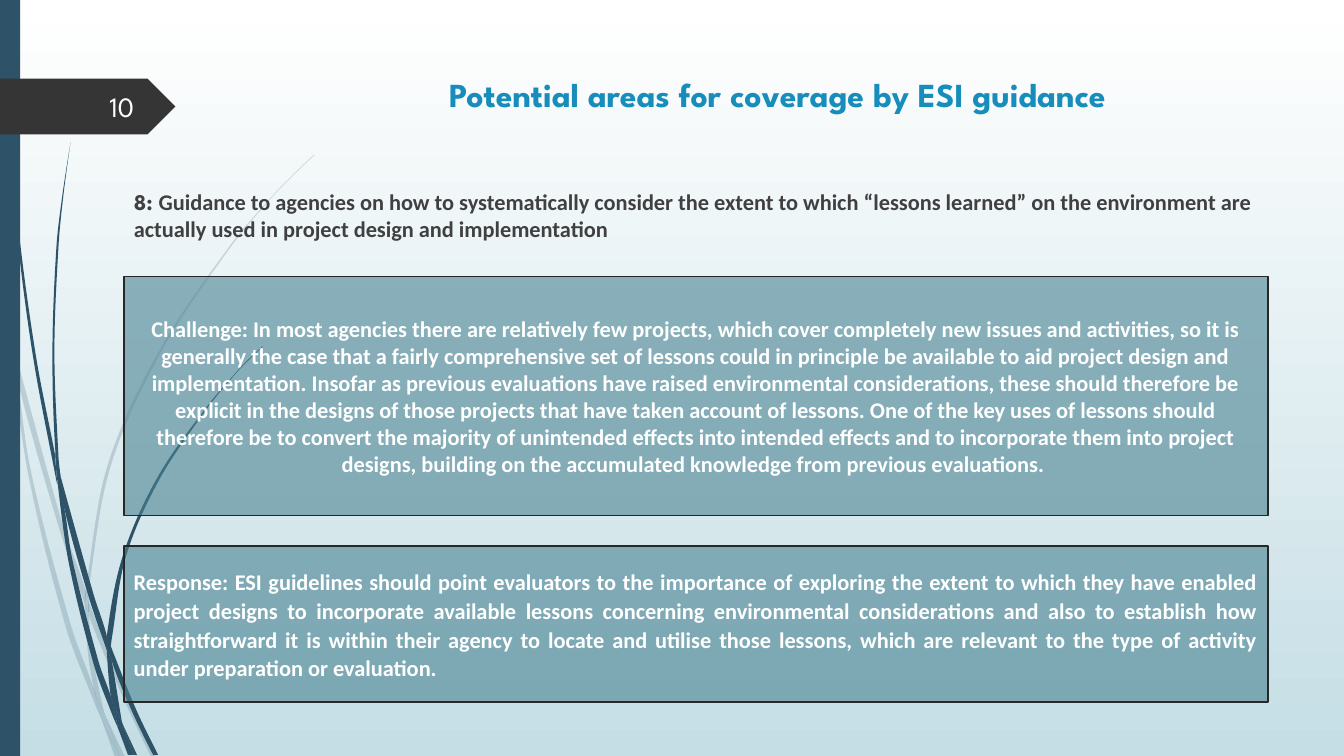
from dataclasses import dataclass
from math import hypot

from lxml.etree import SubElement
from pptx import Presentation
from pptx.dml.color import RGBColor as Rgb
from pptx.enum.shapes import MSO_SHAPE as Kind
from pptx.enum.text import MSO_ANCHOR as Anchor, MSO_AUTO_SIZE as Fit, PP_ALIGN as Align
from pptx.oxml.ns import qn
from pptx.shapes.base import BaseShape
from pptx.slide import Slide
from pptx.text.text import Font, TextFrame
from pptx.util import Cm, Pt

Point = tuple[float, float]


@dataclass(frozen=True)
class Theme:
    navy: str = "2E5369"
    tag: str = "353535"
    teal: str = "498392"
    edge: str = "272727"
    title: str = "178DBB"
    ink: str = "404040"
    white: str = "FFFFFF"
    sky: str = "C5DEE5"
    head: str = "League Spartan"
    text: str = "Calibri"
    big: int = 24
    mid: int = 20
    small: int = 16


@dataclass(frozen=True)
class Plant:
    """Leaf outlines in inches, all drawn at one opacity in percent."""
    alpha: int
    leaves: tuple[tuple[Point, ...], ...]


@dataclass(frozen=True)
class Panel:
    text: str
    top: float
    height: float
    align: Align
    lead: float = 1.0
    after: int = 0


LOOK = Theme()
WIDE, HIGH = 33.87, 19.05
LEFT, SPAN = 3.12, 28.83
INCH = 2.54

PALE = Plant(20, (
    ((.11, 3.5), (.09, 3.22), (0, 2.82), (0, 2.99), (.1, 3.44)),
    ((.58, 5.22), (.84, 5.99), (.85, 5.86), (.62, 5.2), (.14, 3.45), (.17, 3.76)),
    ((.92, 6.07), (.88, 5.96), (.88, 6.1), (1.23, 6.94), (1.5, 7.51), (1.55, 7.51), (1.27, 6.92)),
    ((1.19, 7.51), (1.24, 7.51), (1.05, 7.11)),
    ((.93, 6.83), (.7, 6.19), (.31, 4.69), (.17, 3.76), (.11, 3.5), (.28, 4.7), (.65, 6.21), (.92, 6.93),
     (1.01, 7.14), (.99, 7.07)),
    ((.84, 5.99), (.87, 6.46), (.93, 6.83), (.96, 6.92), (1.05, 7.11), (1.03, 7.06), (.91, 6.46), (.88, 6.1)),
    ((.88, 5.84), (1.1, 4.62), (1.6, 3.49), (2.29, 2.45), (2.68, 1.98), (2.9, 1.75), (3.12, 1.54),
     (3.12, 1.53), (2.89, 1.75), (2.68, 1.97), (2.28, 2.44), (1.58, 3.48), (1.07, 4.61), (.85, 5.84),
     (.85, 5.86), (.88, 5.96)),
    ((1.01, 7.14), (1.14, 7.51), (1.19, 7.51)),
    ((.88, 6.08), (.88, 5.96), (.85, 5.86), (.84, 5.99)),
    ((.96, 6.92), (.93, 6.83), (.99, 7.07), (1.01, 7.14), (1.19, 7.51), (1.05, 7.11)),
))
DARK = Plant(100, (
    ((.07, 1.1), (.17, 2.33), (.33, 3.55), (.56, 4.77), (.57, 4.81), (.55, 4.57), (.55, 4.53), (.36, 3.55),
     (.19, 2.32), (.08, 1.09), (.05, .48), (.04, 0), (.03, 0), (.04, .48)),
    ((.88, 5.92), (1.06, 6.45), (1.06, 6.31), (.93, 5.9), (.6, 4.72), (.64, 5.05)),
    ((1.13, 6.49), (1.1, 6.41), (1.11, 6.56), (1.32, 7.08), (1.52, 7.49), (1.57, 7.49), (1.36, 7.06)),
    ((1.1, 6.91), (.98, 6.57), (.72, 5.56), (.64, 5.05), (.57, 4.77), (.68, 5.57), (.93, 6.59), (1.11, 7.08),
     (1.17, 7.22), (1.16, 7.17)),
    ((.6, 4.72), (.58, 4.53), (.54, 3.49), (.58, 2.45), (.63, 1.93), (.7, 1.41), (.62, 1.93), (.56, 2.45),
     (.52, 3.49), (.55, 4.49)),
    ((1.33, 7.49), (1.36, 7.49), (1.22, 7.19)),
    ((.57, 4.77), (.64, 5.05), (.6, 4.72), (.55, 4.49), (.55, 4.53)),
    ((1.11, 6.33), (1.25, 5.52), (1.58, 4.76), (2.05, 4.06), (2.31, 3.74), (2.45, 3.59), (2.61, 3.44),
     (2.6, 3.44), (2.45, 3.58), (2.31, 3.73), (2.04, 4.05), (1.56, 4.74), (1.22, 5.51), (1.06, 6.31),
     (1.1, 6.41)),
    ((1.17, 7.22), (1.27, 7.49), (1.31, 7.49)),
    ((1.06, 6.45), (1.1, 6.91), (1.16, 7.06), (1.22, 7.19), (1.21, 7.16), (1.11, 6.56), (1.09, 6.51)),
    ((1.06, 6.45), (1.09, 6.51), (1.11, 6.56), (1.1, 6.41), (1.06, 6.31)),
    ((1.16, 7.06), (1.1, 6.91), (1.16, 7.17), (1.17, 7.22), (1.3, 7.49), (1.33, 7.49), (1.22, 7.19)),
))

PANELS = (
    Panel("Challenge: In most agencies there are relatively few projects, which cover completely new issues "
          "and activities, so it is generally the case that a fairly comprehensive set of lessons could in "
          "principle be available to aid project design and implementation. Insofar as previous evaluations "
          "have raised environmental considerations, these should therefore be explicit in the designs of "
          "those projects that have taken account of lessons. One of the key uses of lessons should therefore "
          "be to convert the majority of unintended effects into intended effects and to incorporate them "
          "into project designs, building on the accumulated knowledge from previous evaluations. ",
          6.97, 6.02, Align.CENTER),
    Panel("Response: ESI guidelines should point evaluators to the importance of exploring the extent to "
          "which they have enabled project designs to incorporate available lessons concerning environmental "
          "considerations and also to establish how straightforward it is within their agency to locate and "
          "utilise those lessons, which are relevant to the type of activity under preparation or "
          "evaluation. ", 13.75, 3.94, Align.JUSTIFY, 1.07, 8),
)


def style(font: Font, size: int, color: str, face: str, bold: bool = True) -> None:
    font.size, font.name, font.bold = Pt(size), face, bold
    font.color.rgb = Rgb.from_string(color)


def paint(shape: BaseShape, color: str, alpha: int = 100) -> None:
    """Give a flat fill with no line and no shadow."""
    shape.shadow.inherit = False
    shape.fill.solid()
    shape.fill.fore_color.rgb = Rgb.from_string(color)
    shape.line.fill.background()
    if alpha < 100:
        tint = shape.fill._xPr.find(qn("a:solidFill"))[0]
        SubElement(tint, qn("a:alpha"), val=str(alpha * 1000))


def place(shape: BaseShape, left: float, top: float, width: float, height: float) -> None:
    shape.left, shape.top, shape.width, shape.height = map(Cm, (left, top, width, height))


def frame(shape: BaseShape, anchor: Anchor) -> TextFrame:
    body = shape.text_frame
    body.word_wrap, body.auto_size, body.vertical_anchor = True, Fit.NONE, anchor
    return body


def slope(a: Point, b: Point, c: Point) -> Point:
    """Unit direction through b, or zero where the outline turns sharply."""
    ux, uy, vx, vy = b[0] - a[0], b[1] - a[1], c[0] - b[0], c[1] - b[1]
    if ux * vx + uy * vy < .8 * hypot(ux, uy) * hypot(vx, vy):
        return 0, 0
    size = hypot(ux + vx, uy + vy)
    return (ux + vx) / size, (uy + vy) / size


def bend(shape: BaseShape) -> None:
    """Turn the straight sides of a closed outline into smooth curves."""
    track = next(shape._element.iter(qn("a:path")))
    dots = [(int(dot.get("x")), int(dot.get("y"))) for dot in track.iter(qn("a:pt"))][:-1]
    dirs = [slope(dots[i - 1], dot, dots[(i + 1) % len(dots)]) for i, dot in enumerate(dots)]
    for i, side in enumerate(track.findall(qn("a:lnTo"))):
        j = (i + 1) % len(dots)
        (ax, ay), (bx, by) = dots[i], dots[j]
        arm = hypot(bx - ax, by - ay) / 3
        curve = SubElement(track, qn("a:cubicBezTo"))
        for x, y in ((ax + arm * dirs[i][0], ay + arm * dirs[i][1]),
                     (bx - arm * dirs[j][0], by - arm * dirs[j][1]), (bx, by)):
            SubElement(curve, qn("a:pt"), x=str(round(x)), y=str(round(y)))
        track.replace(side, curve)


def grow(slide: Slide, plant: Plant) -> None:
    for leaf in plant.leaves:
        first, *rest = [(Cm(x * INCH), Cm(y * INCH)) for x, y in leaf]
        pen = slide.shapes.build_freeform(*first)
        pen.add_line_segments([*rest, first], close=True)
        shape = pen.convert_to_shape()
        bend(shape)
        paint(shape, LOOK.navy, plant.alpha)


def block(slide: Slide, kind: Kind, box: tuple[float, ...], color: str, alpha: int = 100) -> BaseShape:
    shape = slide.shapes.add_shape(kind, *map(Cm, box))
    paint(shape, color, alpha)
    return shape


def show(slide: Slide, panel: Panel) -> None:
    box = block(slide, Kind.RECTANGLE, (LEFT, panel.top, SPAN, panel.height), LOOK.teal, 60)
    box.line.color.rgb, box.line.width = Rgb.from_string(LOOK.edge), Pt(1.25)
    para = frame(box, Anchor.MIDDLE).paragraphs[0]
    para.text, para.alignment = panel.text, panel.align
    para.line_spacing, para.space_after = panel.lead, Pt(panel.after)
    style(para.font, LOOK.small, LOOK.white, LOOK.text)


def write(slide: Slide) -> None:
    """Fill the title, the lead sentence and the page number."""
    title, body = slide.shapes.title, slide.placeholders[1]
    place(title, 7.21, 1.73, 24.77, 3.56)
    para = frame(title, Anchor.TOP).paragraphs[0]
    para.text, para.alignment = "Potential areas for coverage by ESI guidance", Align.CENTER
    style(para.font, LOOK.big, LOOK.title, LOOK.head)
    place(body, LEFT, 4.62, SPAN, 11.81)
    para = frame(body, Anchor.TOP).paragraphs[0]
    para.space_before = Pt(10)
    rule = para._p.get_or_add_pPr()
    rule.set("marL", "0")
    rule.set("indent", "0")
    SubElement(rule, qn("a:buNone"))
    for face, text in ((LOOK.head, "8: "), (LOOK.text, (
            "Guidance to agencies on how to systematically consider the extent to which “lessons learned” "
            "on the environment are actually used in project design and implementation"))):
        run = para.add_run()
        run.text = text
        style(run.font, LOOK.small, LOOK.ink, face)
    page = slide.shapes.add_textbox(*map(Cm, (1.47, 2.18, 2.16, 1.02)))
    para = frame(page, Anchor.MIDDLE).paragraphs[0]
    para.text, para.alignment = "10", Align.RIGHT
    style(para.font, LOOK.mid, LOOK.white, LOOK.head, False)


def main() -> None:
    deck = Presentation()
    deck.slide_width, deck.slide_height = Cm(WIDE), Cm(HIGH)
    slide = deck.slides.add_slide(deck.slide_layouts[1])
    back = slide.background.fill
    back.gradient()
    back.gradient_angle = 270
    for stop, color in zip(back.gradient_stops, (LOOK.white, LOOK.sky)):
        stop.color.rgb = Rgb.from_string(color)
    for plant in (PALE, DARK):
        grow(slide, plant)
    block(slide, Kind.RECTANGLE, (0, 0, .51, HIGH), LOOK.navy)
    block(slide, Kind.PENTAGON, (0, 1.98, 4.42, 1.41), LOOK.tag)
    write(slide)
    for panel in PANELS:
        show(slide, panel)
    deck.save("out.pptx")


if __name__ == "__main__":
    main()
